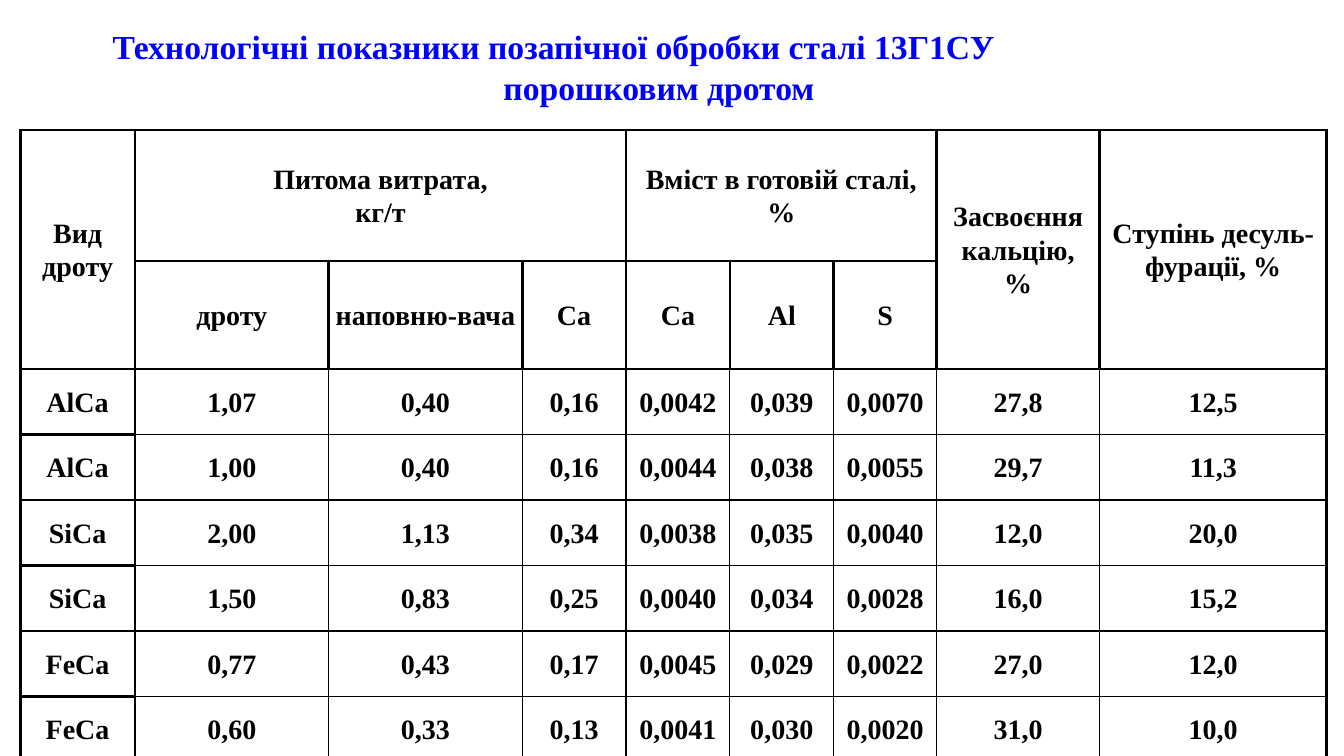
from typing import NamedTuple

from lxml.etree import SubElement
from pptx import Presentation
from pptx.dml.color import RGBColor
from pptx.enum.text import MSO_ANCHOR, PP_ALIGN
from pptx.oxml.ns import qn
from pptx.slide import Slide
from pptx.table import Table, _Cell
from pptx.util import Inches, Pt

FONT = "Times New Roman"
COLORS = {"ink": "000000", "title": "0000FF"}
THICK, THIN = 2.25, 1


class Head(NamedTuple):
    row: int
    col: int
    text: str
    rows: int = 1
    cols: int = 1


HEADS = [
    Head(0, 0, "Вид дроту", rows=2),
    Head(0, 1, "Питома витрата,\nкг/т", cols=3),
    Head(0, 4, "Вміст в готовій сталі, %", cols=3),
    Head(0, 7, "Засвоєння кальцію,\n%", rows=2),
    Head(0, 8, "Ступінь десуль-\nфурації, %", rows=2),
    Head(1, 1, "дроту"),
    Head(1, 2, "наповню-вача"),
    Head(1, 3, "Са"),
    Head(1, 4, "Са"),
    Head(1, 5, "Al"),
    Head(1, 6, "S"),
]
DATA = [
    ["AlCa", "1,07", "0,40", "0,16", "0,0042", "0,039", "0,0070", "27,8", "12,5"],
    ["AlCa", "1,00", "0,40", "0,16", "0,0044", "0,038", "0,0055", "29,7", "11,3"],
    ["SiCa", "2,00", "1,13", "0,34", "0,0038", "0,035", "0,0040", "12,0", "20,0"],
    ["SiCa", "1,50", "0,83", "0,25", "0,0040", "0,034", "0,0028", "16,0", "15,2"],
    ["FeCa", "0,77", "0,43", "0,17", "0,0045", "0,029", "0,0022", "27,0", "12,0"],
    ["FeCa", "0,60", "0,33", "0,13", "0,0041", "0,030", "0,0020", "31,0", "10,0"],
]
WIDTHS = [1.14, 1.92, 1.92, 1.03, 1.03, 1.03, 1.02, 1.62, 2.25]
TOP_ROWS = 2
HEIGHTS = [1.3, 1.07] + [0.65] * len(DATA)


def set_font(par, size: float, color: str) -> None:
    font = par.font
    font.name, font.size, font.bold = FONT, Pt(size), True
    font.color.rgb = RGBColor.from_string(COLORS[color])


def fill_cell(cell: _Cell, text: str) -> None:
    cell.text = text
    for par in cell.text_frame.paragraphs:
        par.alignment = PP_ALIGN.CENTER
        par.line_spacing = 1.07
        set_font(par, 20, "ink")


def style_cell(cell: _Cell, row: int, col: int) -> None:
    cell.vertical_anchor = MSO_ANCHOR.MIDDLE
    cell.margin_left = cell.margin_right = Inches(0.07)
    cell.margin_top = cell.margin_bottom = 0
    # Heavy lines frame the header, the first column and the outer edge
    frame = row < TOP_ROWS or col == 0
    heavy = {
        "lnL": frame or col == 1,
        "lnR": frame or col == len(WIDTHS) - 1,
        "lnT": frame or row == TOP_ROWS,
        "lnB": frame or row == len(HEIGHTS) - 1,
    }
    props = cell._tc.get_or_add_tcPr()
    for side, bold in heavy.items():
        line = SubElement(props, qn(f"a:{side}"), w=str(Pt(THICK if bold else THIN)))
        paint = SubElement(line, qn("a:solidFill"))
        SubElement(paint, qn("a:srgbClr"), val=COLORS["ink"])
    cell.fill.background()


def add_title(slide: Slide) -> None:
    box = slide.shapes.add_textbox(Inches(0.46), Inches(0.21), Inches(12.15), Inches(0.9))
    frame = box.text_frame
    frame.word_wrap = True
    frame.vertical_anchor = MSO_ANCHOR.MIDDLE
    frame.text = "Технологічні показники позапічної обробки сталі 13Г1СУ\nпорошковим дротом"
    first, last = frame.paragraphs
    first.alignment = PP_ALIGN.LEFT
    first._p.get_or_add_pPr().set("marL", str(Inches(0.56)))
    last.alignment = PP_ALIGN.CENTER
    for par in (first, last):
        set_font(par, 24, "title")


def add_grid(slide: Slide) -> Table:
    shape = slide.shapes.add_table(
        len(HEIGHTS), len(WIDTHS), Inches(0.2), Inches(1.29),
        Inches(sum(WIDTHS)), Inches(sum(HEIGHTS)))
    table = shape.table
    table.first_row = table.horz_banding = False
    for col, width in zip(table.columns, WIDTHS):
        col.width = Inches(width)
    for row, height in zip(table.rows, HEIGHTS):
        row.height = Inches(height)
    for row in range(len(HEIGHTS)):
        for col in range(len(WIDTHS)):
            style_cell(table.cell(row, col), row, col)
    return table


def main() -> None:
    deck = Presentation()
    deck.slide_width, deck.slide_height = Inches(13.33), Inches(7.5)
    slide = deck.slides.add_slide(deck.slide_layouts[6])

    # Table with merged header
    table = add_grid(slide)
    for head in HEADS:
        cell = table.cell(head.row, head.col)
        if head.rows * head.cols > 1:
            cell.merge(table.cell(head.row + head.rows - 1, head.col + head.cols - 1))
        fill_cell(cell, head.text)

    # Values
    for row, values in enumerate(DATA, TOP_ROWS):
        for col, value in enumerate(values):
            fill_cell(table.cell(row, col), value)

    # Title
    add_title(slide)
    deck.save("out.pptx")


if __name__ == "__main__":
    main()
